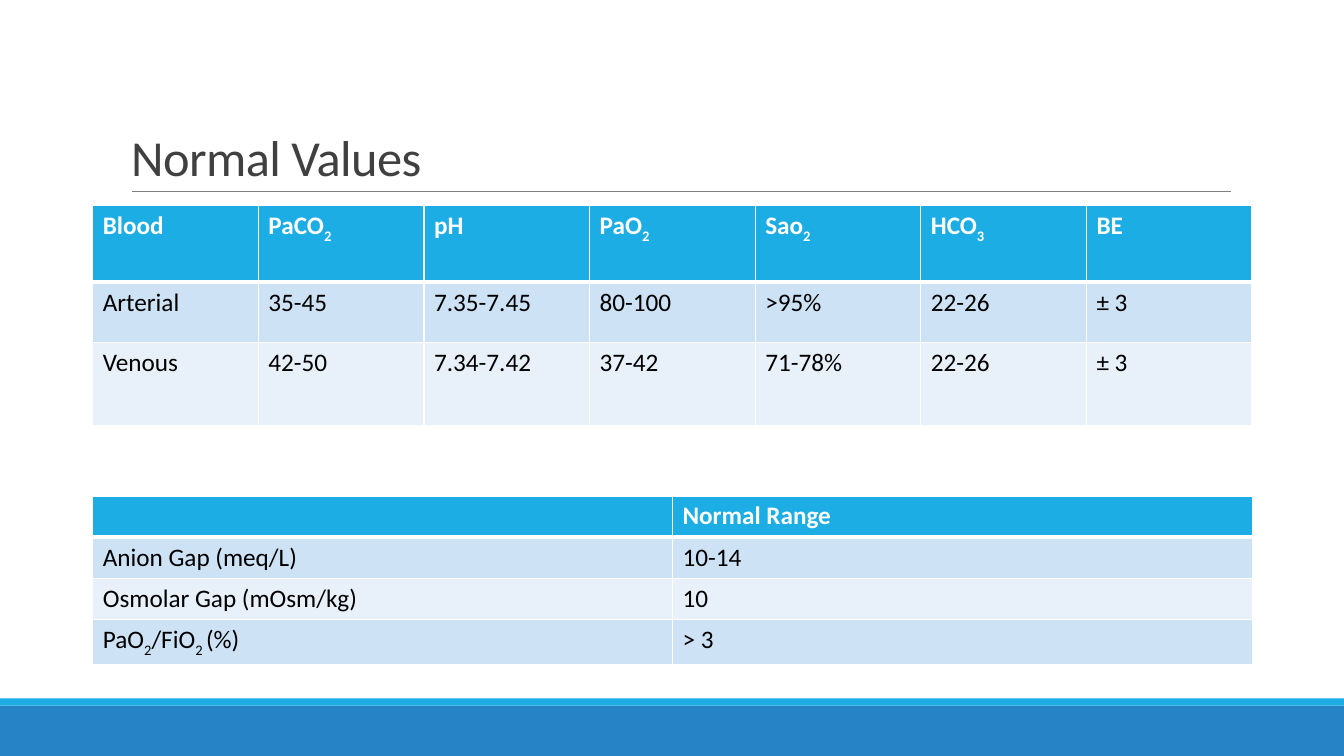
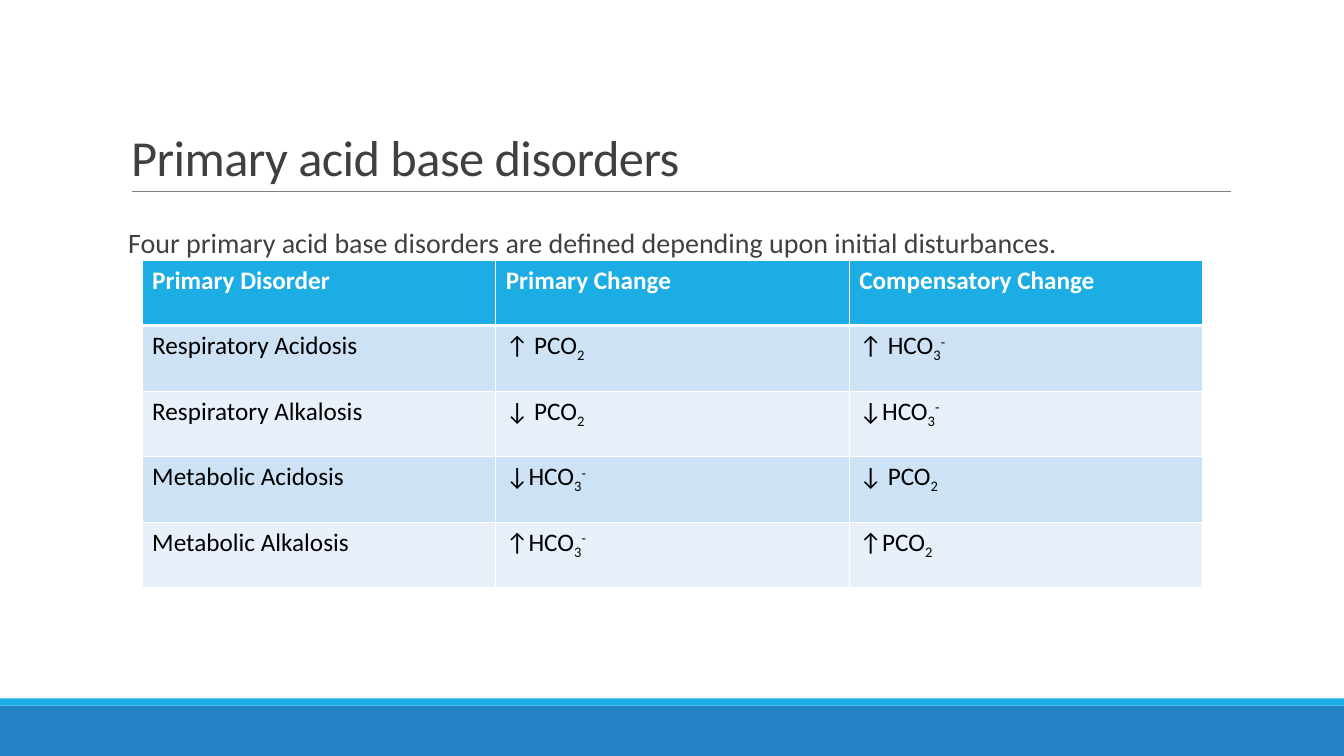
import pptx
import pptx.dml.color
import pptx.enum.shapes
import pptx.enum.text
import pptx.oxml
import pptx.oxml.ns
import pptx.util
from pptx.util import Inches

FONT = "Calibri"
BLUE, CYAN, GREY, DARK = "2683C6", "1CADE4", "808080", "404040"
WHITE, BLACK = "FFFFFF", "000000"
STRIPES = ("CDE3F5", "E8F1FA")
BASELINES = {"_": "-25000", "^": "30000"}

BLOOD_GASES = [
    ["Blood", "PaCO|_2", "pH", "PaO|_2", "Sao|_2", "HCO|_3", "BE"],
    ["Arterial", "35-45", "7.35-7.45", "80-100", ">95%", "22-26", "± 3"],
    ["Venous", "42-50", "7.34-7.42", "37-42", "71-78%", "22-26", "± 3"],
]
NORMAL_RANGES = [
    ["", "Normal Range"],
    ["Anion Gap (meq/L)", "10-14"],
    ["Osmolar Gap (mOsm/kg)", "10"],
    ["PaO|_2|/FiO|_2 |(%)", "> 3"],
]
DISORDERS = [
    ["Primary Disorder", "Primary Change", "Compensatory Change"],
    ["Respiratory Acidosis", "↑ PCO|_2", "↑ HCO|_3|^-"],
    ["Respiratory Alkalosis", "↓ PCO|_2", "↓HCO|_3|^-"],
    ["Metabolic Acidosis", "↓HCO|_3|^-", "↓ PCO|_2"],
    ["Metabolic Alkalosis", "↑HCO|_3|^-", "↑PCO|_2"],
]


def rgb(value):
    """Turn a hex string into a colour."""
    return pptx.dml.color.RGBColor.from_string(value)


def style_run(r, size, color, bold=False):
    """Set the font of a run."""
    r.font.name = FONT
    r.font.size = pptx.util.Pt(size)
    r.font.bold = bold
    r.font.color.rgb = rgb(color)


def add_band(slide, top, height, color):
    """Add a full-width footer band."""
    sp = slide.shapes.add_shape(pptx.enum.shapes.MSO_SHAPE.RECTANGLE, 0,
                                Inches(top), Inches(13.33), Inches(height))
    sp.shadow.inherit = False
    sp.fill.solid()
    sp.fill.fore_color.rgb = rgb(color)
    sp.line.fill.background()


def add_rule(slide):
    """Add the thin line below the title."""
    line = slide.shapes.add_connector(
        pptx.enum.shapes.MSO_CONNECTOR.STRAIGHT,
        Inches(1.31), Inches(1.9), Inches(12.21), Inches(1.9))
    line.line.color.rgb = rgb(GREY)
    line.line.width = pptx.util.Pt(0.5)
    effects = pptx.oxml.parse_xml(
        f"<a:effectLst {pptx.oxml.ns.nsdecls('a')}/>")
    line.element.spPr.append(effects)


def add_slide(prs, title):
    """Add a slide with bands, rule and title."""
    slide = prs.slides.add_slide(prs.slide_layouts[5])
    add_band(slide, 7, 0.5, BLUE)
    add_band(slide, 6.93, 0.07, CYAN)
    add_rule(slide)
    sp = slide.shapes.title
    sp.left, sp.top = Inches(1.2), Inches(0.31)
    sp.width, sp.height = Inches(11), Inches(1.59)
    tf = sp.text_frame
    tf.text = title
    tf.auto_size = pptx.enum.text.MSO_AUTO_SIZE.NONE
    tf.vertical_anchor = pptx.enum.text.MSO_ANCHOR.BOTTOM
    p = tf.paragraphs[0]
    p.alignment = pptx.enum.text.PP_ALIGN.LEFT
    p.line_spacing = 0.85
    r = p.runs[0]
    style_run(r, 36, DARK)
    r.font._element.set("spc", "-40")
    return slide


def add_body(slide, text):
    """Add the introductory sentence."""
    sp = slide.shapes.add_textbox(Inches(1.2), Inches(2.02),
                                  Inches(11), Inches(4.4))
    tf = sp.text_frame
    tf.word_wrap = True
    tf.margin_left, tf.margin_right = Inches(0.07), 0
    tf.text = text
    p = tf.paragraphs[0]
    p.line_spacing = 1.5
    p.space_before, p.space_after = pptx.util.Pt(9), pptx.util.Pt(1.5)
    style_run(p.runs[0], 20, DARK)


def set_borders(cell, top, bottom):
    """Draw white cell borders, with top and bottom widths in points."""
    tc_pr = cell._tc.get_or_add_tcPr()
    for side, width in (("L", 1), ("R", 1), ("T", top), ("B", bottom)):
        tc_pr.append(pptx.oxml.parse_xml(
            f"<a:ln{side} {pptx.oxml.ns.nsdecls('a')} "
            f'w="{pptx.util.Pt(width)}"><a:solidFill>'
            f'<a:srgbClr val="{WHITE}"/></a:solidFill></a:ln{side}>'))


def fill_cell(cell, text, row):
    """Write and format a cell; _ and ^ start lowered and raised parts."""
    header = row == 0
    set_borders(cell, 3 if row == 1 else 1, 3 if header else 1)
    cell.fill.solid()
    cell.fill.fore_color.rgb = rgb(CYAN if header else STRIPES[(row - 1) % 2])
    p = cell.text_frame.paragraphs[0]
    for part in filter(None, text.split("|")):
        r = p.add_run()
        r.text = part.lstrip("_^")
        style_run(r, 18, WHITE if header else BLACK, header)
        if part[0] in BASELINES:
            r.font._element.set("baseline", BASELINES[part[0]])


def add_table(slide, left, top, width, heights, rows):
    """Add a striped table with equal columns."""
    columns = len(rows[0])
    table = slide.shapes.add_table(
        len(rows), columns, Inches(left), Inches(top),
        Inches(width), Inches(sum(heights))).table
    for column in table.columns:
        column.width = Inches(width / columns)
    for i, (height, texts) in enumerate(zip(heights, rows)):
        table.rows[i].height = Inches(height)
        for j, text in enumerate(texts):
            fill_cell(table.cell(i, j), text, i)


def main():
    """Build and save the presentation."""
    prs = pptx.Presentation()
    prs.slide_width, prs.slide_height = Inches(13.33), Inches(7.5)

    slide = add_slide(prs, "Normal Values")
    add_table(slide, 0.92, 2.04, 11.5, [0.76, 0.6, 0.82], BLOOD_GASES)
    add_table(slide, 0.92, 4.92, 11.5, [0.41] * 4, NORMAL_RANGES)

    slide = add_slide(prs, "Primary acid base disorders")
    add_body(slide, "Four primary acid base disorders are defined "
                    "depending upon initial disturbances.")
    add_table(slide, 1.41, 2.58, 10.52, [0.65] * 5, DISORDERS)

    prs.save("out.pptx")


if __name__ == "__main__":
    main()
